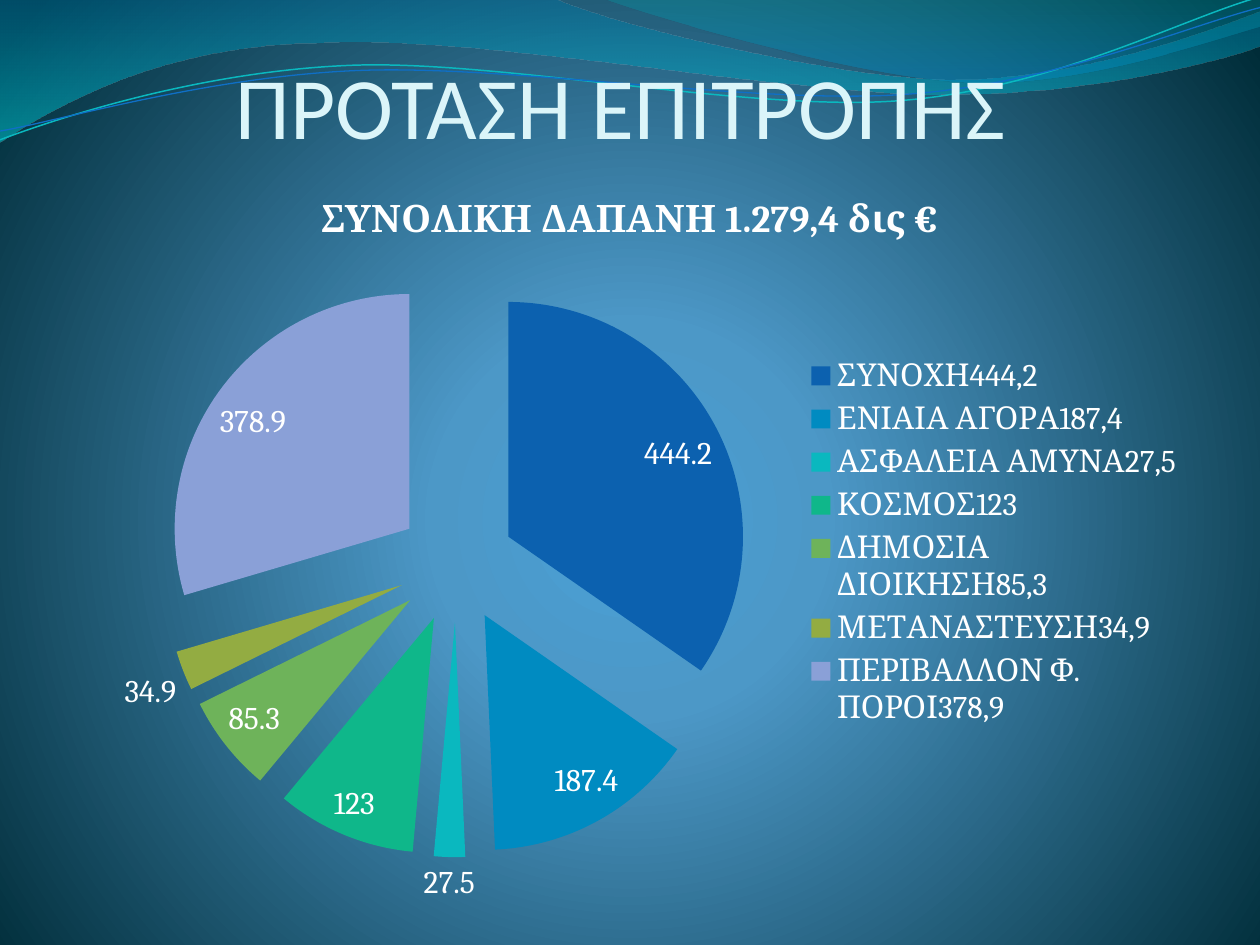
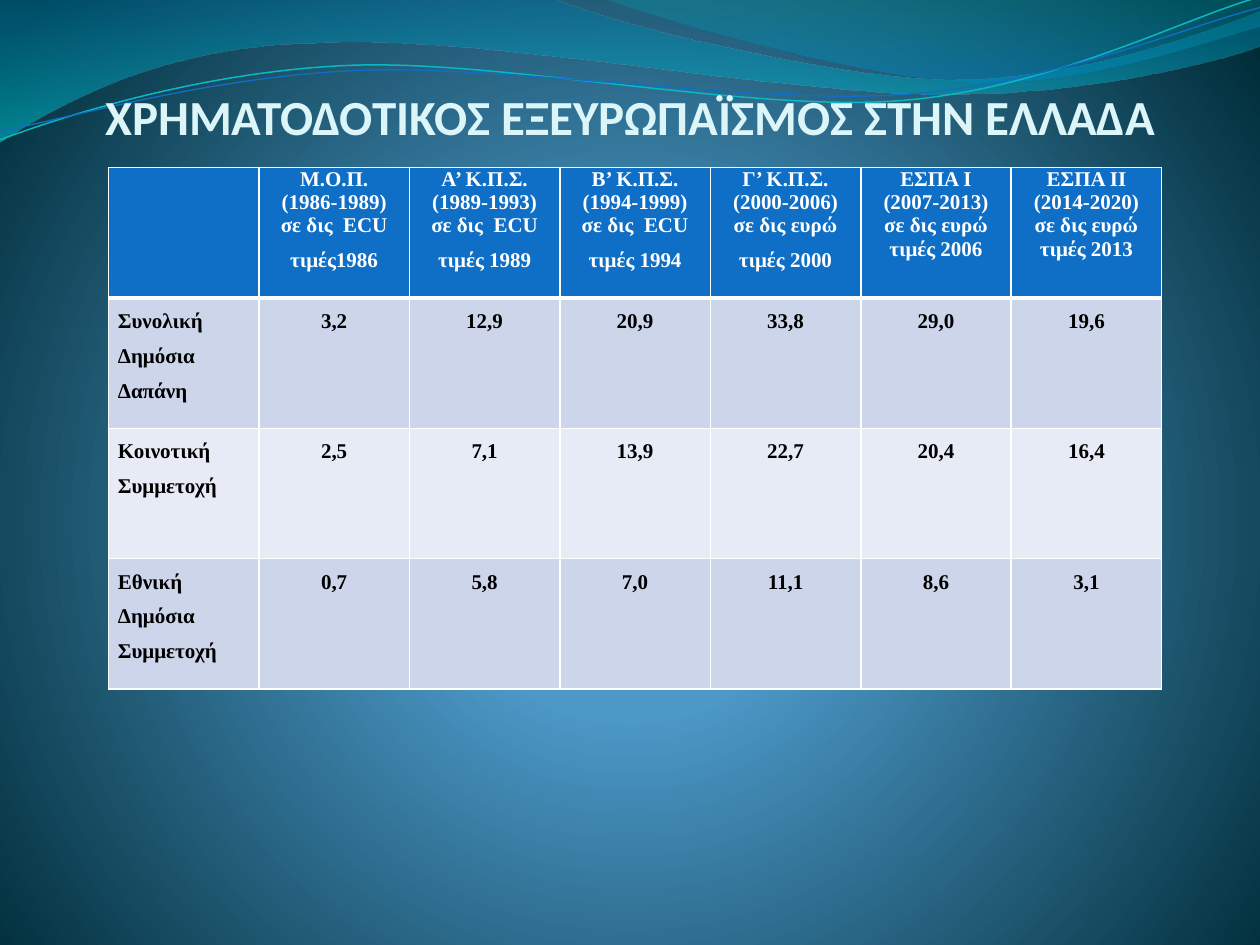
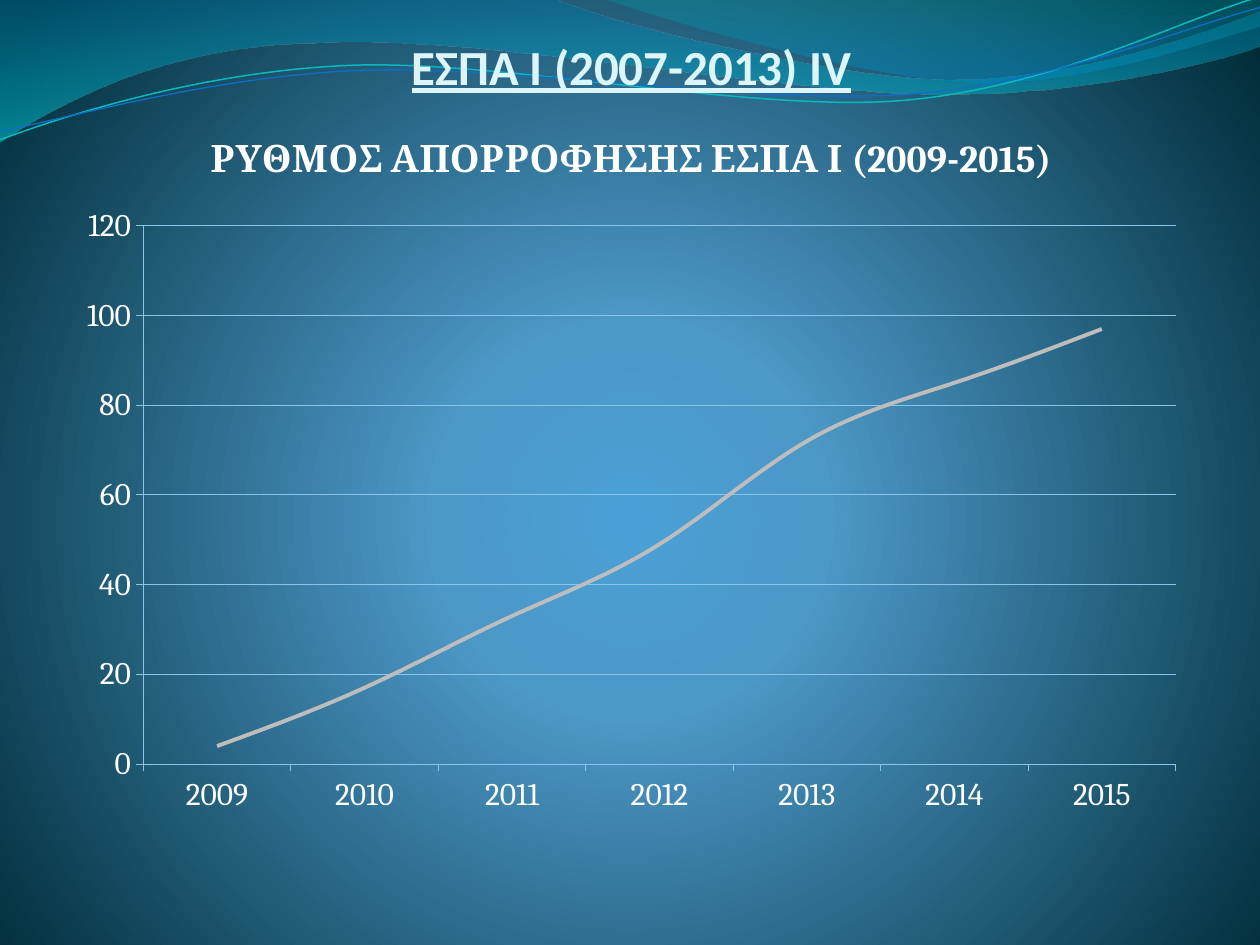
from lxml.etree import SubElement
from pptx import Presentation
from pptx.chart.data import CategoryChartData
from pptx.dml.color import RGBColor
from pptx.enum.chart import (XL_CHART_TYPE, XL_LABEL_POSITION, XL_LEGEND_POSITION,
                             XL_MARKER_STYLE, XL_TICK_MARK)
from pptx.enum.text import MSO_ANCHOR, MSO_AUTO_SIZE, PP_ALIGN
from pptx.oxml.ns import qn
from pptx.util import Pt

# Shared colours and fonts
WHITE = RGBColor(0xFF, 0xFF, 0xFF)
BLACK = RGBColor(0x00, 0x00, 0x00)
TITLE_ICE = RGBColor(0xDB, 0xF5, 0xF9)
HEADER_BLUE = RGBColor(0x0F, 0x6F, 0xC6)
BAND_DARK = RGBColor(0xCC, 0xD5, 0xEA)
BAND_LIGHT = RGBColor(0xE7, 0xEB, 0xF5)
GRID_BLUE = RGBColor(0x89, 0xC5, 0xE8)
RATE_GREY = RGBColor(0xBD, 0xBD, 0xBD)
WAVE_TEAL = RGBColor(0x0A, 0xB8, 0xBF)
SLICE_COLOURS = [RGBColor.from_string(code) for code in
                 ("0C61AF", "008BC1", "0AB8BF", "0FB78A", "6EB35A", "93AC42", "8AA0D7")]
TITLE_FONT, CHART_FONT, TABLE_FONT = "Calibri", "Cambria", "Times New Roman"

# Background stops: position %, colour, opacity %
BACKGROUND_STOPS = [(0, "4AA0D6", 100), (25, "4C98C7", 100), (100, "002C38", 100)]

# Waves in points: a start, then lines (2 numbers) or curves (6 numbers)
WAVE_BANDS = [
    ([(0, -0.7), (317, -0.7),
      (342.7, 12.2, 478, 45.4, 545.8, 45.4), (614.2, 45.4, 689.8, 18.7, 720, 6.5),
      (720.7, 25.9), (707.8, 31.7, 626.4, 54.7, 537.1, 54),
      (447.8, 54, 275, 20.2, 185, 24.5), (92.9, 25.2, 33.1, 59.8, -0.7, 81.4)],
     [(0, "0074A1", 45), (100, "00C6CF", 55)]),
    ([(345, -0.7), (366.5, 7.9, 491, 44.6, 553.7, 46.8),
      (616.3, 49.7, 691.9, 23, 720, 15.1), (720, 0)],
     [(0, "00A1A9", 30), (80, "008BBF", 45)]),
]
WAVE_LINES = [
    ([(0, 79.9), (34.6, 67, 113.8, 41, 199.4, 37.4),
      (284.4, 33.8, 427, 64.1, 513.4, 57.6), (599.8, 51.1, 675.4, 10.8, 718.6, -1.4)],
     WAVE_TEAL, 0.85),
    ([(0, 74.9), (33.8, 69.1, 118.1, 43.9, 203.8, 40.3),
      (290.2, 36.7, 429.8, 59.8, 516.2, 54), (601.9, 48.2, 677.5, 15.1, 720, 4.3)],
     HEADER_BLUE, 0.75),
]

# Content
SPENDING = {
    "ΣΥΝΟΧΗ444,2": 444.2, "ΕΝΙΑΙΑ ΑΓΟΡΑ187,4": 187.4, "ΑΣΦΑΛΕΙΑ ΑΜΥΝΑ27,5": 27.5,
    "ΚΟΣΜΟΣ123": 123, "ΔΗΜΟΣΙΑ ΔΙΟΙΚΗΣΗ85,3": 85.3, "ΜΕΤΑΝΑΣΤΕΥΣΗ34,9": 34.9,
    "ΠΕΡΙΒΑΛΛΟΝ Φ. ΠΟΡΟΙ378,9": 378.9,
}
ABSORPTION = {"2009": 4, "2010": 17, "2011": 33, "2012": 49,
              "2013": 72, "2014": 85, "2015": 97}
# Header text and the line spacing of its last paragraph
PERIODS = [
    ("", 1),
    ("Μ.Ο.Π.\n(1986-1989)\nσε δις  ECU\nτιμές1986", 1.5),
    ("Α’ Κ.Π.Σ. (1989-1993)\nσε δις  ECU\nτιμές 1989", 1.5),
    ("Β’ Κ.Π.Σ. (1994-1999)\nσε δις  ECU\nτιμές 1994", 1.5),
    ("Γ’ Κ.Π.Σ. (2000-2006)\nσε δις ευρώ\nτιμές 2000", 1.5),
    ("ΕΣΠΑ Ι (2007-2013)\nσε δις ευρώ τιμές 2006", 1),
    ("ΕΣΠΑ ΙΙ (2014-2020)\nσε δις ευρώ\nτιμές 2013", 1),
]
FUNDING = [
    ("Συνολική Δημόσια Δαπάνη", "3,2", "12,9", "20,9", "33,8", "29,0", "19,6"),
    ("Κοινοτική Συμμετοχή", "2,5", "7,1", "13,9", "22,7", "20,4", "16,4"),
    ("Εθνική Δημόσια Συμμετοχή", "0,7", "5,8", "7,0", "11,1", "8,6", "3,1"),
]


def style_font(font, name, size, colour, bold=False):
    font.name, font.size, font.bold = name, Pt(size), bold
    font.color.rgb = colour


def set_gradient(fill, holder, stops):
    """Start a gradient fill and return its element, holding only the stops."""
    fill.gradient()
    gradient = holder.find(".//" + qn("a:gradFill"))
    for child in list(gradient):
        gradient.remove(child)
    stop_list = SubElement(gradient, qn("a:gsLst"))
    for position, colour, opacity in stops:
        stop = SubElement(stop_list, qn("a:gs"), pos=str(position * 1000))
        value = SubElement(stop, qn("a:srgbClr"), val=colour)
        if opacity < 100:
            SubElement(value, qn("a:alpha"), val=str(opacity * 1000))
    return gradient


def add_wave(page, segments, close):
    """Lay the outline through all its points, then join each three into a curve."""
    points = [(Pt(x), Pt(y)) for segment in segments
              for x, y in zip(segment[::2], segment[1::2])]
    builder = page.shapes.build_freeform(*points[0])
    builder.add_line_segments(points[1:], close=close)
    wave = builder.convert_to_shape()
    wave.shadow.inherit = False
    steps = iter(list(wave.element.iter(qn("a:lnTo"))))
    for segment in segments[1:]:
        step = next(steps)
        if len(segment) == 6:
            curve = SubElement(step.getparent(), qn("a:cubicBezTo"))
            step.addprevious(curve)
            for part in (step, next(steps), next(steps)):
                curve.append(part[0])
                part.getparent().remove(part)
    return wave


def decorate_master(master, page):
    """Give the master its glow and waves; the waves are outlined on a page, then moved."""
    glow = set_gradient(master.background.fill, master.element, BACKGROUND_STOPS)
    circle = SubElement(glow, qn("a:path"))
    circle.set("path", "circle")
    SubElement(circle, qn("a:fillToRect"), l="10000", t="110000", r="10000", b="100000")

    waves = []
    for segments, stops in WAVE_BANDS:
        wave = add_wave(page, segments, True)
        gradient = set_gradient(wave.fill, wave.element, stops)
        SubElement(gradient, qn("a:lin"), ang="5400000", scaled="1")
        wave.line.fill.background()
        waves.append(wave)
    for segments, colour, width in WAVE_LINES:
        wave = add_wave(page, segments, False)
        wave.fill.background()
        wave.line.color.rgb = colour
        wave.line.width = Pt(width)
        waves.append(wave)
    for index, wave in enumerate(waves):
        master.shapes.element.insert(2 + index, wave.element)


def set_title(page, text, box, size, bold=True, underline=False):
    title = page.shapes.title
    title.left, title.top, title.width, title.height = map(Pt, box)
    frame = title.text_frame
    frame.text = text
    frame.auto_size = MSO_AUTO_SIZE.NONE
    frame.vertical_anchor = MSO_ANCHOR.BOTTOM
    frame.margin_left = frame.margin_right = frame.margin_bottom = 0
    frame.margin_top = Pt(3.6)
    para = frame.paragraphs[0]
    para.alignment = PP_ALIGN.CENTER
    span = para.runs[0]
    style_font(span.font, TITLE_FONT, size, TITLE_ICE, bold)
    span.font.underline = underline


def add_titled_chart(page, kind, values, title, box):
    data = CategoryChartData()
    data.categories = list(values)
    data.add_series("Series 1", list(values.values()))
    chart = page.shapes.add_chart(kind, *map(Pt, box), data).chart
    style_font(chart.font, CHART_FONT, 18, WHITE)
    chart.has_title = True
    frame = chart.chart_title.text_frame
    frame.text = title
    para = frame.paragraphs[0]
    for font in (para.font, para.runs[0].font):
        style_font(font, CHART_FONT, 21.6, WHITE, True)
    chart.chart_title.include_in_layout = False
    return chart


def add_spending_pie(page, box):
    chart = add_titled_chart(page, XL_CHART_TYPE.PIE, SPENDING,
                             "ΣΥΝΟΛΙΚΗ ΔΑΠΑΝΗ 1.279,4 δις €", box)
    chart.has_legend = True
    chart.legend.position = XL_LEGEND_POSITION.RIGHT
    chart.legend.include_in_layout = False
    plot = chart.plots[0]
    plot.vary_by_categories = True
    series = plot.series[0]
    for index, colour in enumerate(SLICE_COLOURS):
        fill = series.points[index].format.fill
        fill.solid()
        fill.fore_color.rgb = colour
    labels = series.data_labels
    labels.show_value = True
    labels.position = XL_LABEL_POSITION.BEST_FIT
    # Pull the slices apart
    first_point = series._element.find(qn("c:dPt"))
    explosion = SubElement(series._element, qn("c:explosion"), val="25")
    first_point.addprevious(explosion)


def add_absorption_line(page, box):
    chart = add_titled_chart(page, XL_CHART_TYPE.LINE, ABSORPTION,
                             "ΡΥΘΜΟΣ ΑΠΟΡΡΟΦΗΣΗΣ ΕΣΠΑ Ι (2009-2015)", box)
    chart.has_legend = False
    chart.plots[0].vary_by_categories = False
    series = chart.plots[0].series[0]
    series.smooth = True
    series.marker.style = XL_MARKER_STYLE.NONE
    series.format.line.color.rgb = RATE_GREY
    series.format.line.width = Pt(2.25)
    value_axis = chart.value_axis
    value_axis.minimum_scale, value_axis.maximum_scale, value_axis.major_unit = 0, 120, 20
    value_axis.has_major_gridlines = True
    for axis in (chart.category_axis, value_axis):
        axis.major_tick_mark = XL_TICK_MARK.OUTSIDE
    for part in (chart.category_axis, value_axis, value_axis.major_gridlines):
        part.format.line.color.rgb = GRID_BLUE
        part.format.line.width = Pt(0.5)


def fill_cell(cell, text, fill, colour, alignment, last_spacing, bottom_width=1):
    cell.margin_left = cell.margin_right = Pt(5.4)
    cell.margin_top = cell.margin_bottom = 0
    cell.vertical_anchor = MSO_ANCHOR.TOP
    cell.fill.solid()
    cell.fill.fore_color.rgb = fill
    cell.text_frame.text = text
    paras = cell.text_frame.paragraphs
    for para in paras:
        para.alignment = alignment
        for span in para.runs:
            style_font(span.font, TABLE_FONT, 12, colour, True)
    paras[-1].line_spacing = last_spacing
    # White borders, placed ahead of the fill
    properties = cell._tc.get_or_add_tcPr()
    for index, side in enumerate("LRTB"):
        width = bottom_width if side == "B" else 1
        border = SubElement(properties, qn("a:ln" + side), w=str(Pt(width)))
        SubElement(SubElement(border, qn("a:solidFill")), qn("a:srgbClr"), val=str(WHITE))
        properties.insert(index, border)


def add_funding_table(page, box):
    row_count, column_count = len(FUNDING) + 1, len(PERIODS)
    table = page.shapes.add_table(row_count, column_count, *map(Pt, box)).table
    for column in table.columns:
        column.width = Pt(box[2] / column_count)
    for row in table.rows:
        row.height = Pt(box[3] / row_count)
    for column, (text, spacing) in enumerate(PERIODS):
        fill_cell(table.cell(0, column), text, HEADER_BLUE, WHITE,
                  PP_ALIGN.CENTER, spacing, bottom_width=3)
    for row, texts in enumerate(FUNDING, 1):
        band = BAND_DARK if row % 2 else BAND_LIGHT
        for column, text in enumerate(texts):
            alignment = PP_ALIGN.CENTER if column else PP_ALIGN.JUSTIFY
            fill_cell(table.cell(row, column), text, band, BLACK, alignment, 1.5)


def main():
    deck = Presentation()
    deck.slide_width, deck.slide_height = Pt(720), Pt(540)
    title_only = deck.slide_layouts[5]
    proposal, funding, absorption = [deck.slides.add_slide(title_only) for _ in range(3)]
    decorate_master(deck.slide_master, proposal)

    set_title(proposal, "ΠΡΟΤΑΣΗ ΕΠΙΤΡΟΠΗΣ", (31, 0, 648, 90), 50, bold=False)
    add_spending_pie(proposal, (36, 94.5, 648, 430.5))

    set_title(funding, "ΧΡΗΜΑΤΟΔΟΤΙΚΟΣ ΕΞΕΥΡΩΠΑΪΣΜΟΣ ΣΤΗΝ ΕΛΛΑΔΑ", (36, 0, 648, 83), 28)
    add_funding_table(funding, (62, 95.75, 602, 298))

    set_title(absorption, "ΕΣΠΑ Ι (2007-2013) IV", (36.75, 0, 648, 54.5), 28, underline=True)
    add_absorption_line(absorption, (36.75, 60.5, 648, 412.5))

    deck.save("out.pptx")


if __name__ == "__main__":
    main()
